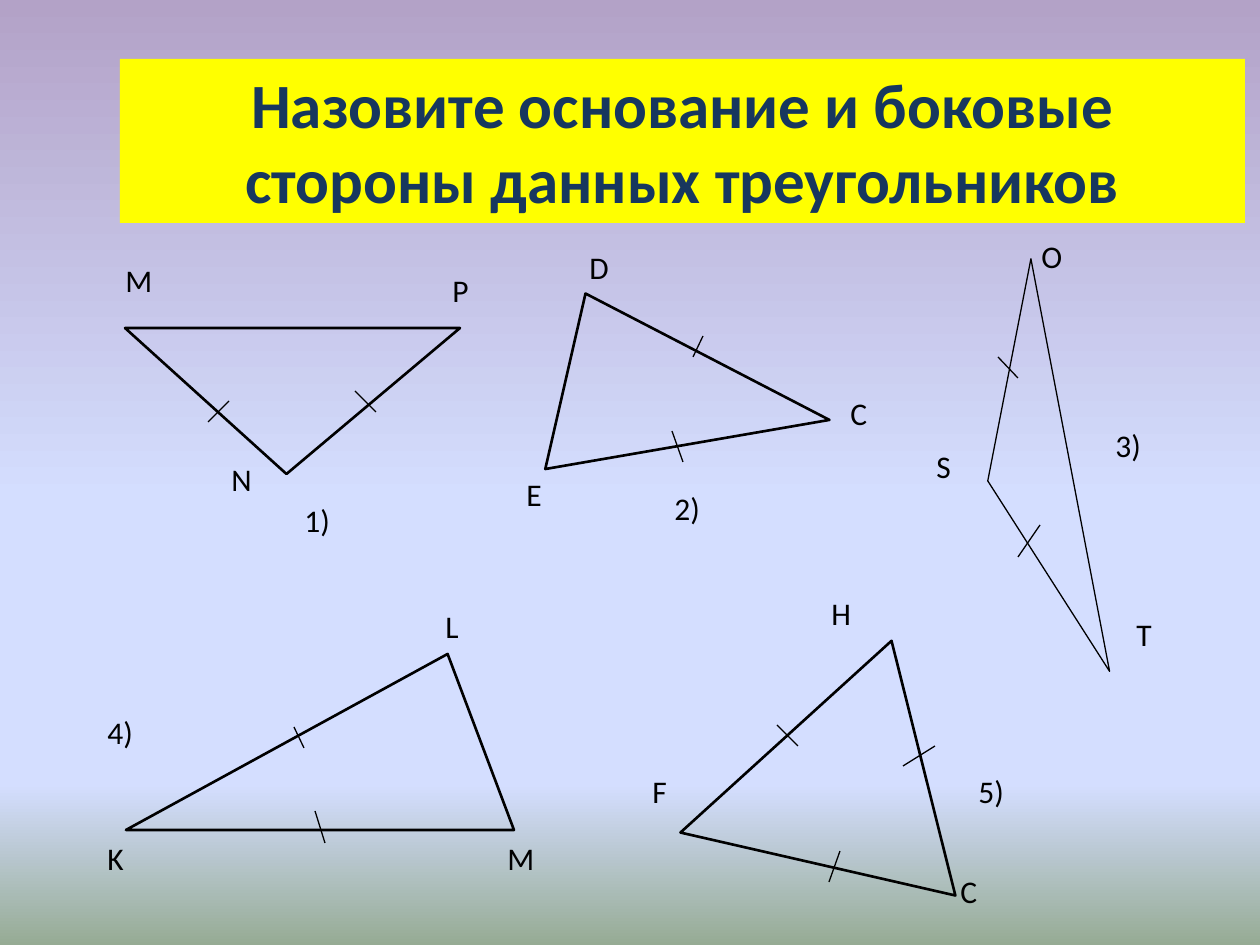
from dataclasses import dataclass

from lxml.etree import SubElement
from pptx import Presentation
from pptx.dml.color import RGBColor as RGB
from pptx.enum.shapes import MSO_CONNECTOR as CONN, MSO_SHAPE as SHAPE
from pptx.enum.text import MSO_ANCHOR as ANCHOR, MSO_AUTO_SIZE as AUTO, PP_ALIGN as ALIGN
from pptx.oxml.ns import qn
from pptx.util import Emu, Pt

EMU_PER_PX = 914400 / 126


@dataclass(frozen=True)
class Theme:
    font: str = "Calibri"
    title_size: int = 36
    label_size: int = 18
    title: str = "17375E"
    title_fill: str = "FFFF00"
    ink: str = "000000"
    thin: float = 0.75
    thick: float = 1.5
    sky: tuple = ((0, "B3A2C7"), (53, "D4DEFF"), (83, "D4DEFF"), (100, "96AB94"))


@dataclass(frozen=True)
class Figure:
    number: tuple
    box: tuple
    apex: float
    vertices: tuple
    ticks: tuple
    rotation: float = 0
    weight: float = Theme.thick


THEME = Theme()
NUMBER_WIDTH = 84
LABEL_HEIGHT = 63

FIGURES = (
    Figure(
        number=(292, 495), box=(125, 328, 335, 146), apex=0.518, rotation=180,
        vertices=(("Р", 440, 265, 50), ("М", 113, 255, 60), ("N", 219, 454, 57)),
        ticks=((355, 391, 376, 412), (229, 401, 208, 422)),
    ),
    Figure(
        number=(662, 483), box=(605, 278, 180, 266), apex=0.382, rotation=102.9,
        vertices=(("D", 577, 242, 58), ("C", 838, 388, 54), ("E", 514, 469, 52)),
        ticks=((703, 336, 693, 357), (672, 431, 683, 462)),
    ),
    Figure(
        number=(1103, 420), box=(819, 431, 420, 84), apex=0.5, rotation=259.2,
        weight=THEME.thin,
        vertices=(("O", 1029, 231, 58), ("S", 924, 441, 54), ("T", 1124, 609, 52)),
        ticks=((998, 357, 1018, 378), (1040, 525, 1018, 557)),
    ),
    Figure(
        number=(95, 707), box=(126, 654, 388, 176), apex=0.829,
        vertices=(("K", 95, 833, 54), ("M", 495, 833, 60), ("L", 433, 601, 49)),
        ticks=((294, 727, 304, 748), (315, 811, 325, 843)),
    ),
    Figure(
        number=(966, 766), box=(703, 633, 282, 234), apex=0.578, rotation=12.9,
        vertices=(("H", 819, 588, 57), ("F", 640, 766, 49), ("C", 948, 866, 54)),
        ticks=((777, 725, 798, 746), (935, 746, 903, 766), (840, 851, 829, 882)),
    ),
)


def px(*values):
    return [Emu(round(v * EMU_PER_PX)) for v in values]


def set_font(p, size, color, bold=False):
    p.font.name = THEME.font
    p.font.size = Pt(size)
    p.font.bold = bold
    p.font.color.rgb = RGB.from_string(color)


def paint_background(s):
    fill = s.background.fill
    fill.gradient()
    fill.gradient_angle = 270
    stops = s.element.find(".//" + qn("a:gsLst"))
    for stop in list(stops):
        stops.remove(stop)
    for percent, color in THEME.sky:
        stop = SubElement(stops, qn("a:gs"), pos=str(percent * 1000))
        SubElement(stop, qn("a:srgbClr"), val=color)


def set_title(s, text):
    sp = s.shapes.title
    sp.left, sp.top, sp.width, sp.height = px(120, 59, 1125, 164)
    sp.fill.solid()
    sp.fill.fore_color.rgb = RGB.from_string(THEME.title_fill)
    tf = sp.text_frame
    tf.text = text
    tf.vertical_anchor = ANCHOR.MIDDLE
    p = tf.paragraphs[0]
    p.alignment = ALIGN.CENTER
    set_font(p, THEME.title_size, THEME.title, bold=True)


def add_label(shapes, text, x, y, width, wrap=False):
    tf = shapes.add_textbox(*px(x, y, width, LABEL_HEIGHT)).text_frame
    tf.text = text
    tf.word_wrap = wrap
    tf.auto_size = AUTO.SHAPE_TO_FIT_TEXT
    set_font(tf.paragraphs[0], THEME.label_size, THEME.ink)


def set_line(line, weight):
    line.color.rgb = RGB.from_string(THEME.ink)
    line.width = Pt(weight)


def add_triangle(shapes, box, apex, rotation, weight):
    sp = shapes.add_shape(SHAPE.ISOSCELES_TRIANGLE, *px(*box))
    sp.adjustments[0] = apex
    sp.rotation = rotation
    sp.shadow.inherit = False
    sp.fill.background()
    set_line(sp.line, weight)


def add_tick(shapes, ends):
    tick = shapes.add_connector(CONN.STRAIGHT, *px(*ends))
    set_line(tick.line, THEME.thin)
    SubElement(tick.element.spPr, qn("a:effectLst"))


def add_figure(s, index, figure):
    shapes = s.shapes.add_group_shape().shapes
    add_triangle(shapes, figure.box, figure.apex, figure.rotation, figure.weight)
    add_label(shapes, f"{index})", *figure.number, NUMBER_WIDTH, wrap=True)
    for vertex in figure.vertices:
        add_label(shapes, *vertex)
    for ends in figure.ticks:
        add_tick(shapes, ends)


def main():
    prs = Presentation()
    prs.slide_width, prs.slide_height = px(1260, 945)
    s = prs.slides.add_slide(prs.slide_layouts[5])
    paint_background(s)
    set_title(s, "Назовите основание и боковые стороны данных треугольников")
    for index, figure in enumerate(FIGURES, 1):
        add_figure(s, index, figure)
    prs.save("out.pptx")


if __name__ == "__main__":
    main()
